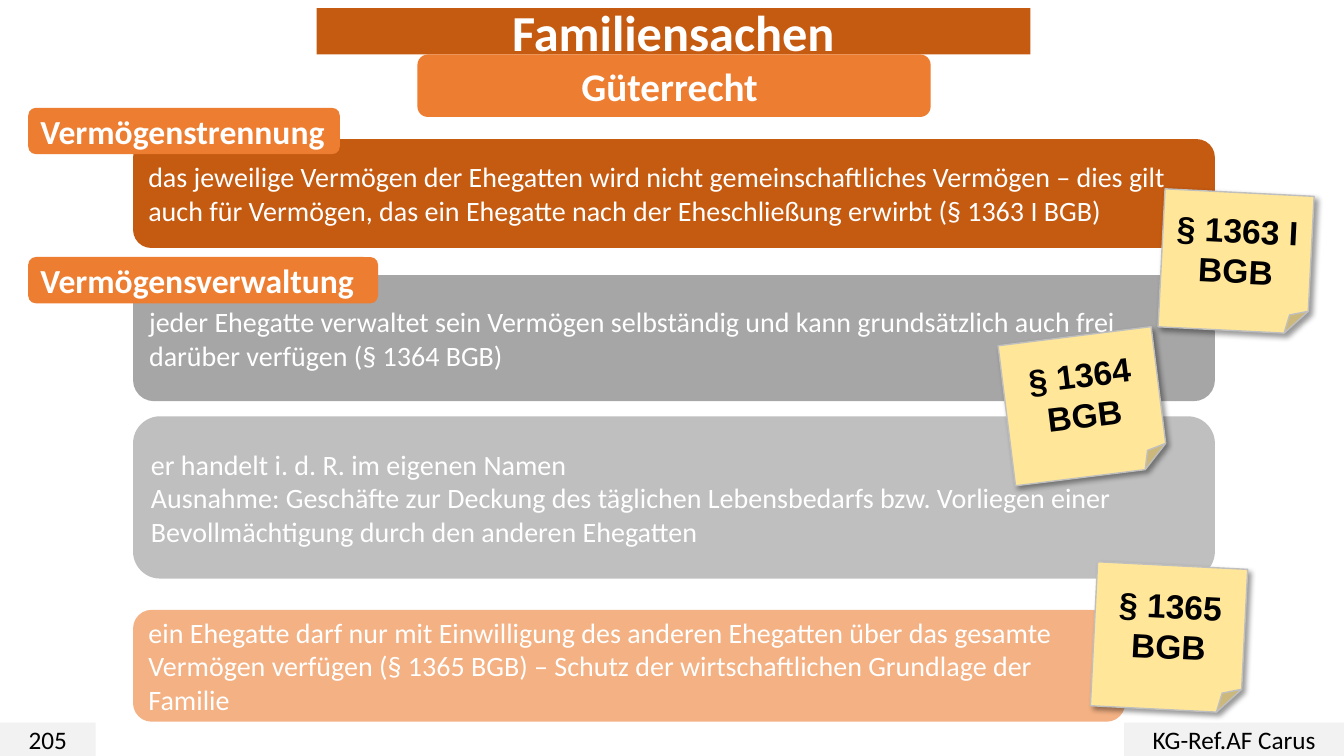
from lxml import etree
from pptx import Presentation
from pptx.dml.color import RGBColor
from pptx.enum.shapes import MSO_SHAPE
from pptx.enum.text import MSO_ANCHOR, MSO_AUTO_SIZE, PP_ALIGN
from pptx.oxml import parse_xml
from pptx.oxml.ns import nsdecls, qn
from pptx.util import Inches, Pt

ROUNDED, RECT, NOTE = MSO_SHAPE.ROUNDED_RECTANGLE, MSO_SHAPE.RECTANGLE, MSO_SHAPE.FOLDED_CORNER
LEFT, CENTER = PP_ALIGN.LEFT, PP_ALIGN.CENTER
MIDDLE, NO_FIT = MSO_ANCHOR.MIDDLE, MSO_AUTO_SIZE.NONE

# Content
TITLE = "Familiensachen"
SUBTITLE = "Güterrecht "
FOOTERS = [  # text, left, width
    ("205", 0, 0.95),
    ("KG-Ref.AF Carus", 11.15, 2.18),
]
STATEMENTS = [  # paragraphs, top, width, height, fill
    (["das jeweilige Vermögen der Ehegatten wird nicht gemeinschaftliches Vermögen – dies gilt "
      "auch für Vermögen, das ein Ehegatte nach der Eheschließung erwirbt (§ 1363 I BGB)"],
     1.38, 10.73, 1.08, "C55A11"),
    (["ein Ehegatte darf nur mit Einwilligung des anderen Ehegatten über das gesamte "
      "Vermögen verfügen (§ 1365 BGB) – Schutz der wirtschaftlichen Grundlage der Familie"],
     6.05, 9.84, 1.11, "F4B183"),
    (["jeder Ehegatte verwaltet sein Vermögen selbständig und kann grundsätzlich auch frei "
      "darüber verfügen (§ 1364 BGB)"],
     2.73, 10.73, 1.25, "A6A6A6"),
    (["er handelt i. d. R. im eigenen Namen",
      "Ausnahme: Geschäfte zur Deckung des täglichen Lebensbedarfs bzw. Vorliegen einer "
      "Bevollmächtigung durch den anderen Ehegatten"],
     4.13, 10.73, 1.61, "BFBFBF"),
]
LABELS = [  # text, top, width
    ("Vermögenstrennung", 1.07, 3.09),
    ("Vermögensverwaltung", 2.55, 3.47),
]
NOTES = [  # paragraphs, (left, top, width, height), rotation
    (["§ 1363 I BGB"], (11.52, 1.91, 1.48, 1.37), 2.9),
    (["§ 1364 BGB"], (9.98, 3.33, 1.53, 1.4), -7.1),
    (["§ 1365", "BGB"], (10.85, 5.61, 1.49, 1.43), 2.9),
]
ORANGE, DARK_ORANGE, PALE_GREY, YELLOW = "ED7D31", "C55A11", "F2F2F2", "FFE699"
WHITE, BLACK, NOTE_EDGE = "FFFFFF", "000000", "BFBFBF"
BAR_HEIGHT = 0.46


def color(value):
    return RGBColor.from_string(value)


def write(shape, paragraphs, size, ink=WHITE, bold=False, align=CENTER, font="Calibri"):
    frame = shape.text_frame
    frame.text = "\n".join(paragraphs)
    frame.word_wrap = True
    frame.auto_size = NO_FIT
    frame.vertical_anchor = MIDDLE
    for para in frame.paragraphs:
        para.alignment = align
        para.font.name = font
        para.font.size = Pt(size)
        para.font.bold = bold
        para.font.color.rgb = color(ink)


def add_box(kind, place, fill, paragraphs, size, **style):
    box = page.shapes.add_shape(kind, *map(Inches, place))
    box.shadow.inherit = False
    box.fill.solid()
    box.fill.fore_color.rgb = color(fill)
    box.line.fill.background()
    write(box, paragraphs, size, **style)
    return box


def add_drop_shadow(shape):
    effects = shape._element.spPr.find(qn("a:effectLst"))
    shadow = etree.SubElement(effects, qn("a:outerShdw"), blurRad=str(Pt(4)),
                              dist=str(Pt(3)), dir=str(45 * 60000), rotWithShape="0")
    tint = etree.SubElement(shadow, qn("a:srgbClr"), val=BLACK)
    etree.SubElement(tint, qn("a:alpha"), val="40000")


deck = Presentation()
deck.slide_width, deck.slide_height = Inches(13.33), Inches(7.5)
page = deck.slides.add_slide(deck.slide_layouts[5])

# Title bar, with rounded corners on the placeholder
title = page.shapes.title
title.left, title.top, title.width, title.height = map(Inches, (3.14, 0.08, 7.08, BAR_HEIGHT))
title._element.spPr.append(
    parse_xml(f'<a:prstGeom {nsdecls("a")} prst="roundRect"><a:avLst/></a:prstGeom>'))
title.fill.solid()
title.fill.fore_color.rgb = color(DARK_ORANGE)
write(title, [TITLE], 36, bold=True)

# Subtitle and footers
add_box(ROUNDED, (4.14, 0.54, 5.09, 0.62), ORANGE, [SUBTITLE], 28, bold=True)
for text, left, width in FOOTERS:
    add_box(RECT, (left, 7.17, width, 0.33), PALE_GREY, [text], 18, ink=BLACK)

# Statements and their labels
for paragraphs, top, width, height, fill in STATEMENTS:
    add_box(ROUNDED, (1.32, top, width, height), fill, paragraphs, 20, align=LEFT)
for text, top, width in LABELS:
    add_box(ROUNDED, (0.28, top, width, BAR_HEIGHT), ORANGE, [text], 24, bold=True, align=LEFT)

# Sticky notes
for paragraphs, place, rotation in NOTES:
    note = add_box(NOTE, place, YELLOW, paragraphs, 24, ink=BLACK, bold=True, font="Arial")
    note.rotation = rotation
    note.line.color.rgb = color(NOTE_EDGE)
    note.line.width = Pt(1)
    add_drop_shadow(note)

deck.save("out.pptx")
